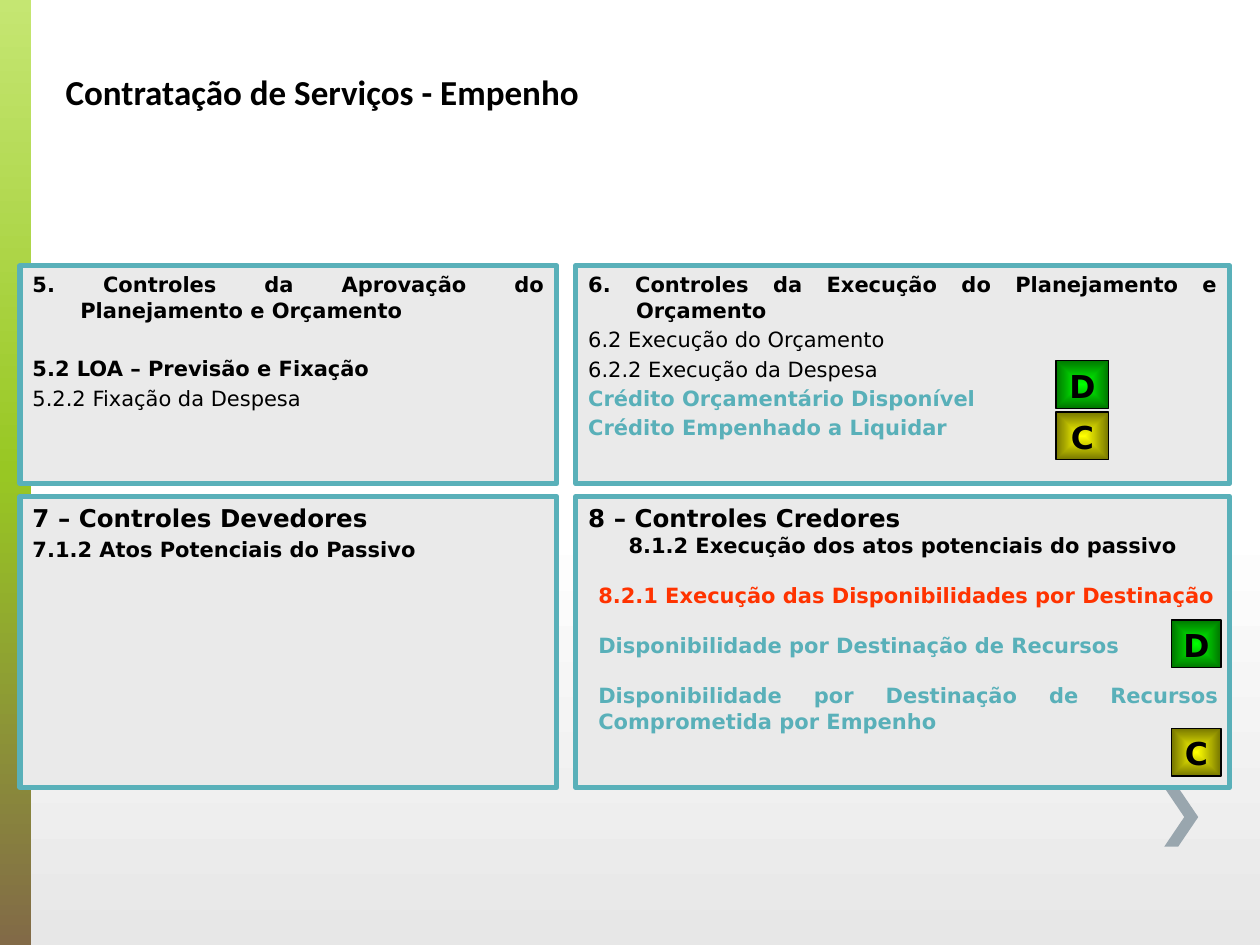
import pptx
import pptx.util
import pptx.dml.color
import pptx.enum.shapes
import pptx.enum.text
import pptx.oxml
import pptx.oxml.ns

Inches, Pt = pptx.util.Inches, pptx.util.Pt
RGB = pptx.dml.color.RGBColor
SHAPE = pptx.enum.shapes.MSO_SHAPE
ALIGN = pptx.enum.text.PP_ALIGN
ANCHOR = pptx.enum.text.MSO_ANCHOR

BLACK = RGB(0x00, 0x00, 0x00)
TEAL = RGB(0x59, 0xB0, 0xB9)
RED = RGB(0xFF, 0x33, 0x00)
PANEL = RGB(0xEA, 0xEA, 0xEA)
CHEVRON = RGB(0x99, 0xA6, 0xAE)
WHITE = RGB(0xFF, 0xFF, 0xFF)
PALE_GREY = RGB(0xE7, 0xE7, 0xE7)
LIME_LIGHT = RGB(0xC5, 0xE6, 0x72)
LIME = RGB(0x98, 0xC7, 0x23)
BROWN = RGB(0x82, 0x6A, 0x47)
BADGE_COLORS = {
    "D": (RGB(0x00, 0xFF, 0x00), RGB(0x00, 0x76, 0x00)),
    "C": (RGB(0xFF, 0xFF, 0x00), RGB(0x76, 0x76, 0x00)),
}

FONT = "DejaVu Sans"
HANGING = 0.38

LEFT_X, RIGHT_X = 0.16, 4.57
LEFT_W, RIGHT_W = 4.26, 5.19
TOP_Y, BOTTOM_Y = 2.11, 3.94
TOP_H, BOTTOM_H = 1.73, 2.31

# Each line: text, then the formats that differ from the defaults of add_lines.
PANELS = [
    ((LEFT_X, BOTTOM_Y, LEFT_W, BOTTOM_H), [
        ("7 – Controles Devedores", {"size": 14}),
        ("7.1.2 Atos Potenciais do Passivo", {}),
    ]),
    ((RIGHT_X, BOTTOM_Y, RIGHT_W, BOTTOM_H), [
        ("8 – Controles Credores", {"size": 14}),
        ("8.1.2 Execução dos atos potenciais do passivo",
         {"align": ALIGN.CENTER, "before": 0}),
    ]),
    ((RIGHT_X, TOP_Y, RIGHT_W, TOP_H), [
        ("6. Controles da Execução do Planejamento e Orçamento", {}),
        ("6.2 Execução do Orçamento", {"bold": False}),
        ("6.2.2 Execução da Despesa", {"bold": False}),
        ("Crédito Orçamentário Disponível", {"color": TEAL}),
        ("Crédito Empenhado a Liquidar", {"color": TEAL}),
    ]),
    ((LEFT_X, TOP_Y, LEFT_W, TOP_H), [
        ("5. Controles da Aprovação do Planejamento e Orçamento", {}),
        ("5.2 LOA – Previsão e Fixação", {"before": 19.2}),
        ("5.2.2 Fixação da Despesa", {"bold": False}),
    ]),
]
FUNDS_LINES = [
    ("8.2.1 Execução das Disponibilidades por Destinação", {"color": RED}),
    ("Disponibilidade por Destinação de Recursos", {"color": TEAL}),
    ("Disponibilidade por Destinação de Recursos Comprometida por Empenho",
     {"color": TEAL}),
]
BADGES = [
    ("D", 9.3, 4.92, 0.39), ("C", 9.3, 5.78, 0.39),
    ("D", 8.38, 2.86, 0.42), ("C", 8.38, 3.27, 0.42),
]


def set_gradient(fill, element, stops, from_center=False):
    """Fill with (percent, colour) stops, downwards or outwards from the centre."""
    fill.gradient()
    grad = element.find(".//" + pptx.oxml.ns.qn("a:gradFill"))
    for child in list(grad):
        grad.remove(child)
    stop_xml = "".join(
        f'<a:gs pos="{pos * 1000}"><a:srgbClr val="{color}"/></a:gs>'
        for pos, color in stops)
    if from_center:
        direction = ('<a:path path="rect"><a:fillToRect l="50000" t="50000" '
                     'r="50000" b="50000"/></a:path>')
    else:
        direction = '<a:lin ang="5400000" scaled="0"/>'
    source = pptx.oxml.parse_xml(
        f'<a:gradFill {pptx.oxml.ns.nsdecls("a")}>'
        f'<a:gsLst>{stop_xml}</a:gsLst>{direction}</a:gradFill>')
    for child in list(source):
        grad.append(child)


def add_box(slide, kind, box, line=None, line_width=0):
    sp = slide.shapes.add_shape(kind, *map(Inches, box))
    sp.shadow.inherit = False
    if line is None:
        sp.line.fill.background()
    else:
        sp.line.color.rgb = line
        sp.line.width = Pt(line_width)
    return sp


def format_run(r, size, color=BLACK, bold=True, name=FONT):
    for key, value in {"size": Pt(size), "bold": bold, "name": name}.items():
        setattr(r.font, key, value)
    r.font.color.rgb = color


def add_lines(tf, lines, before, hanging=0):
    """Write one paragraph per line, justified unless its formats say otherwise."""
    tf.word_wrap = True
    tf.vertical_anchor = ANCHOR.TOP
    for i, (text, formats) in enumerate(lines):
        p = tf.paragraphs[0] if i == 0 else tf.add_paragraph()
        size = formats.get("size", 12)
        p.alignment = formats.get("align", ALIGN.JUSTIFY)
        p.space_before = Pt(formats.get("before", before) if i else 0)
        if hanging:
            pPr = p._p.get_or_add_pPr()
            pPr.set("marL", str(Inches(hanging)))
            pPr.set("indent", str(-Inches(hanging)))
        r = p.add_run()
        r.text = text
        format_run(r, size, formats.get("color", BLACK), formats.get("bold", True))


def add_panel(slide, box, lines):
    sp = add_box(slide, SHAPE.RECTANGLE, box, TEAL, 3)
    sp.fill.solid()
    sp.fill.fore_color.rgb = PANEL
    add_lines(sp.text_frame, lines, before=2.4, hanging=HANGING)


def add_badge(slide, letter, left, top, width):
    sp = add_box(slide, SHAPE.RECTANGLE, (left, top, width, 0.38), BLACK, 0.75)
    inner, outer = BADGE_COLORS[letter]
    set_gradient(sp.fill, sp._element, [(0, inner), (100, outer)], from_center=True)
    tf = sp.text_frame
    tf.margin_left = tf.margin_right = 0
    add_lines(tf, [(letter, {"size": 18, "align": ALIGN.CENTER})], before=0)


def add_title(slide, text):
    title = slide.shapes.title
    place = {"left": 0.42, "top": 0.51, "width": 9.5, "height": 0.44}
    for key, value in place.items():
        setattr(title, key, Inches(value))
    p = title.text_frame.paragraphs[0]
    p.alignment = ALIGN.LEFT
    r = p.add_run()
    r.text = text
    format_run(r, 20, name="Calibri")


def add_backdrop(slide):
    background = slide.background
    set_gradient(background.fill, slide._element,
                 [(0, WHITE), (55, WHITE), (100, PALE_GREY)])
    bar = add_box(slide, SHAPE.RECTANGLE, (0, 0, 0.25, 7.5))
    set_gradient(bar.fill, bar._element,
                 [(0, LIME_LIGHT), (50, LIME), (100, BROWN)])
    chevron = add_box(slide, SHAPE.CHEVRON, (9.24, 6.25, 0.27, 0.47))
    chevron.adjustments[0] = 0.59
    chevron.fill.solid()
    chevron.fill.fore_color.rgb = CHEVRON


def main():
    prs = pptx.Presentation()
    prs.slide_width, prs.slide_height = Inches(10), Inches(7.5)
    slide = prs.slides.add_slide(prs.slide_layouts[5])
    add_backdrop(slide)
    add_title(slide, "Contratação de Serviços - Empenho")
    for box, lines in PANELS:
        add_panel(slide, box, lines)
    for badge in BADGES:
        add_badge(slide, *badge)
    funds = slide.shapes.add_textbox(*map(Inches, (4.65, 4.57, 5.12, 1.72)))
    add_lines(funds.text_frame, FUNDS_LINES, before=14.4)
    prs.save("out.pptx")


if __name__ == "__main__":
    main()
